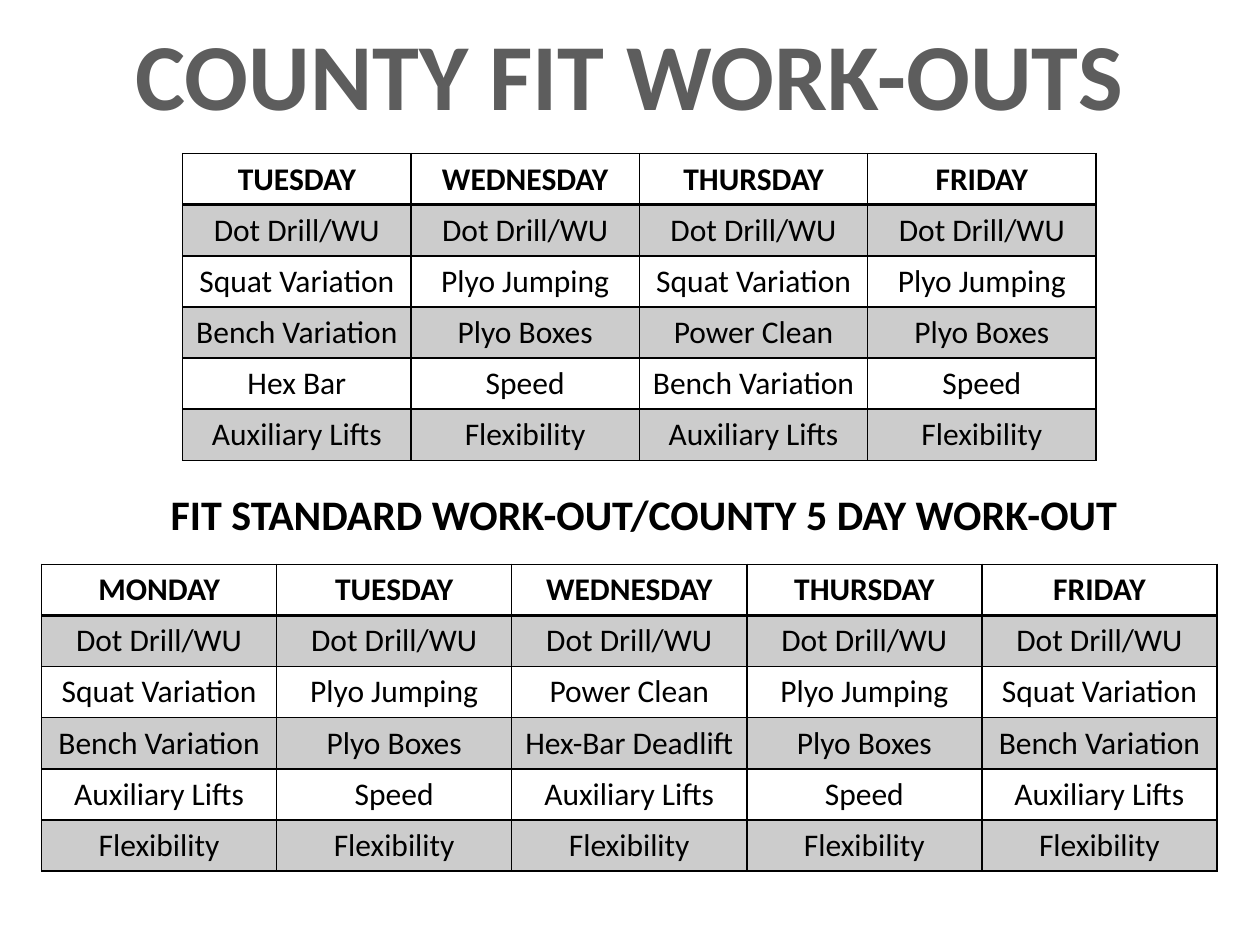
from lxml.etree import SubElement as Sub
from pptx import Presentation
from pptx.dml.color import RGBColor as Rgb
from pptx.enum.text import MSO_ANCHOR as Anchor, PP_ALIGN as Align
from pptx.oxml import parse_xml
from pptx.oxml.ns import nsdecls, qn
from pptx.util import Inches, Pt

BLACK = Rgb(0x00, 0x00, 0x00)
GRAY = Rgb(0x5D, 0x5D, 0x5D)

SHORT = [
    "TUESDAY|WEDNESDAY|THURSDAY|FRIDAY",
    "Dot Drill/WU|Dot Drill/WU|Dot Drill/WU|Dot Drill/WU",
    "Squat Variation|Plyo Jumping|Squat Variation|Plyo Jumping",
    "Bench Variation|Plyo Boxes|Power Clean|Plyo Boxes",
    "Hex Bar|Speed|Bench Variation|Speed",
    "Auxiliary Lifts|Flexibility|Auxiliary Lifts|Flexibility",
]
LONG = [
    "MONDAY|TUESDAY|WEDNESDAY|THURSDAY|FRIDAY",
    "Dot Drill/WU|Dot Drill/WU|Dot Drill/WU|Dot Drill/WU|Dot Drill/WU",
    "Squat Variation|Plyo Jumping|Power Clean|Plyo Jumping|Squat Variation",
    "Bench Variation|Plyo Boxes|Hex-Bar Deadlift|Plyo Boxes|Bench Variation",
    "Auxiliary Lifts|Speed|Auxiliary Lifts|Speed|Auxiliary Lifts",
    "Flexibility|Flexibility|Flexibility|Flexibility|Flexibility",
]


class Page:
    font = "Calibri"
    wide, high = Inches(10), Inches(7.5)
    cols, rows = 100, 75

    def __init__(self, deck):
        deck.slide_width, deck.slide_height = self.wide, self.high
        self.slide = deck.slides.add_slide(deck.slide_layouts[5])

    def area(self, x, y, w, h):
        col, row = self.wide / self.cols, self.high / self.rows
        return int(x * col), int(y * row), int(w * col), int(h * row)

    def style(self, frame, text, size, color, bold):
        frame.text = text
        para = frame.paragraphs[0]
        para.alignment = Align.CENTER
        font = para.runs[0].font
        font.name, font.size, font.bold = self.font, Pt(size), bold
        font.color.rgb = color

    def title(self, text, *place):
        box = self.slide.shapes.title
        box.left, box.top, box.width, box.height = self.area(*place)
        box.text_frame.word_wrap = False
        box.text_frame.vertical_anchor = Anchor.TOP
        self.style(box.text_frame, text, 54, GRAY, True)

    def label(self, text, *place):
        box = self.slide.shapes.add_textbox(*self.area(*place))
        box.text_frame.word_wrap = False
        self.style(box.text_frame, text, 24, BLACK, True)

    def shade(self, cell):
        cell.fill.solid()
        cell.fill.fore_color.rgb = BLACK
        tint = cell._tc.tcPr.find(qn("a:solidFill"))[0]
        Sub(tint, qn("a:alpha")).set("val", "20000")

    def edge(self, cell, top, low):
        sides = {"lnL": 1, "lnR": 1, "lnT": top, "lnB": low}
        for spot, (side, size) in enumerate(sides.items()):
            line = parse_xml(
                f'<a:{side} {nsdecls("a")} w="{Pt(size)}"><a:solidFill>'
                f'<a:srgbClr val="{BLACK}"/></a:solidFill></a:{side}>')
            cell._tc.get_or_add_tcPr().insert(spot, line)

    def table(self, lines, *place):
        rows = [line.split("|") for line in lines]
        area = self.area(*place)
        table = self.slide.shapes.add_table(
            len(rows), len(rows[0]), *area).table
        table.first_row = table.horz_banding = False
        for r, row in enumerate(rows):
            for c, text in enumerate(row):
                cell = table.cell(r, c)
                self.style(cell.text_frame, text, 18, BLACK, r == 0)
                if r % 2:
                    self.shade(cell)
                else:
                    cell.fill.background()
                self.edge(cell, 2 if r == 1 else 1, 2 if r == 0 else 1)


def main():
    deck = Presentation()
    page = Page(deck)
    page.table(SHORT, 14.5, 12.2, 72.5, 24.3)
    page.table(LONG, 3.3, 44.8, 93.3, 24.3)
    page.label("FIT STANDARD WORK-OUT/COUNTY 5 DAY WORK-OUT",
               11.7, 38.3, 78.8, 5)
    page.title("COUNTY FIT WORK-OUTS", 8.3, 0.8, 83.3, 10.1)
    deck.save("out.pptx")


if __name__ == "__main__":
    main()
